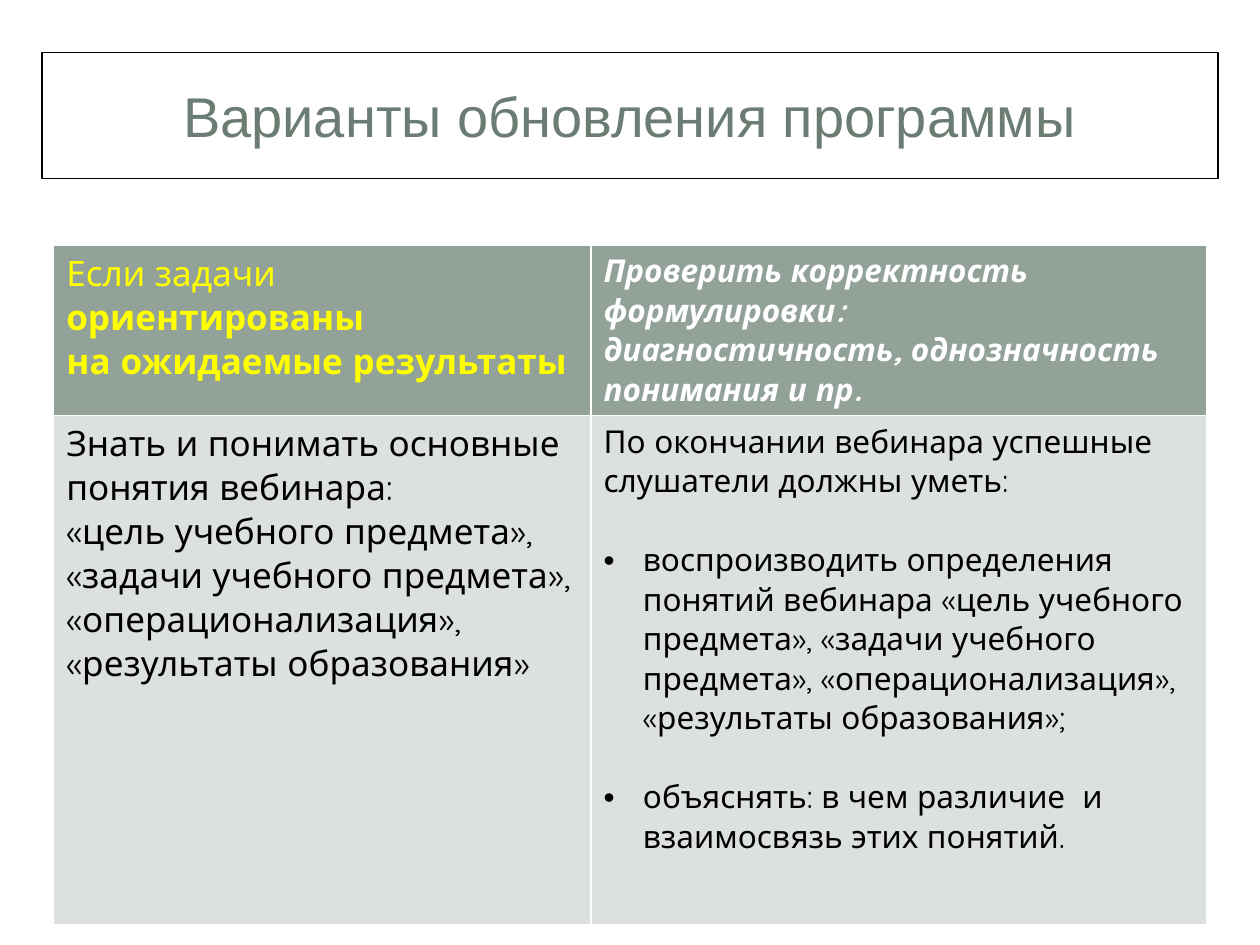
from dataclasses import dataclass

from lxml.etree import SubElement
from pptx import Presentation
from pptx.dml.color import RGBColor
from pptx.enum.shapes import MSO_SHAPE as Shape
from pptx.enum.text import MSO_ANCHOR as Anchor, PP_ALIGN as Align
from pptx.oxml.ns import qn
from pptx.util import Pt


@dataclass(frozen=True)
class Theme:
    title_font: str = "Arial"
    body_font: str = "Quicksand"
    title_size: float = 32
    large_size: float = 20
    small_size: float = 18
    white: str = "FFFFFF"
    black: str = "000000"
    yellow: str = "FFFF00"
    title: str = "6B7D72"
    header_fill: str = "93A299"
    body_fill: str = "DCE0DE"


THEME = Theme()
BULLET_INDENT = 22.5
BULLET_GAP = 22.6


def color(value):
    return RGBColor.from_string(value)


def style_font(font, name, size, value, bold=False, italic=False):
    font.name = name
    font.size = Pt(size)
    font.color.rgb = color(value)
    font.bold = bold
    font.italic = italic


def add_title(slide, text):
    shape = slide.shapes.add_shape(
        Shape.RECTANGLE, Pt(24), Pt(30), Pt(672), Pt(72))
    shape.shadow.inherit = False
    shape.fill.solid()
    shape.fill.fore_color.rgb = color(THEME.white)
    shape.line.color.rgb = color(THEME.black)
    shape.line.width = Pt(0.75)
    frame = shape.text_frame
    frame.word_wrap = False
    frame.vertical_anchor = Anchor.MIDDLE
    paragraph = frame.paragraphs[0]
    paragraph.text = text
    paragraph.alignment = Align.CENTER
    style_font(paragraph.font, THEME.title_font, THEME.title_size, THEME.title)


def add_borders(cell):
    properties = cell._tc.get_or_add_tcPr()
    for side in ("a:lnL", "a:lnR", "a:lnT", "a:lnB"):
        line = SubElement(properties, qn(side), w=str(Pt(1)))
        fill = SubElement(line, qn("a:solidFill"))
        SubElement(fill, qn("a:srgbClr"), val=THEME.white)


def add_bullet(paragraph):
    paragraph.space_before = Pt(BULLET_GAP)
    properties = paragraph._p.get_or_add_pPr()
    properties.set("marL", str(Pt(BULLET_INDENT)))
    properties.set("indent", str(-Pt(BULLET_INDENT)))
    SubElement(properties, qn("a:buFont"), typeface=THEME.title_font)
    SubElement(properties, qn("a:buChar"), char="•")


def fill_cell(cell, fill, lines, size, value, bold=False, italic=False):
    add_borders(cell)
    cell.fill.solid()
    cell.fill.fore_color.rgb = color(fill)
    frame = cell.text_frame
    for index, text in enumerate(lines):
        paragraph = frame.add_paragraph() if index else frame.paragraphs[0]
        run = paragraph.add_run()
        run.text = text
        style_font(run.font, THEME.body_font, size, value, bold, italic)
    return frame.paragraphs


def add_task_table(slide):
    table = slide.shapes.add_table(
        2, 2, Pt(30.7), Pt(140), Pt(659), Pt(388)).table
    for column, width in zip(table.columns, (307, 352)):
        column.width = Pt(width)
    for row, height in zip(table.rows, (97, 291)):
        row.height = Pt(height)

    paragraphs = fill_cell(
        table.cell(0, 0), THEME.header_fill,
        ["Если задачи ", "на ожидаемые результаты"],
        THEME.large_size, THEME.yellow, bold=True)
    paragraphs[0].runs[0].font.bold = False
    emphasis = paragraphs[0].add_run()
    emphasis.text = "ориентированы"
    style_font(emphasis.font, THEME.body_font, THEME.large_size,
               THEME.yellow, bold=True)

    fill_cell(
        table.cell(0, 1), THEME.header_fill,
        ["Проверить корректность формулировки:",
         "диагностичность, однозначность понимания и пр."],
        THEME.small_size, THEME.white, bold=True, italic=True)

    concepts = ("«цель учебного предмета», «задачи учебного предмета», "
                "«операционализация», «результаты образования»")
    fill_cell(
        table.cell(1, 0), THEME.body_fill,
        ["Знать и понимать основные понятия вебинара:", concepts],
        THEME.large_size, THEME.black)

    paragraphs = fill_cell(
        table.cell(1, 1), THEME.body_fill,
        ["По окончании вебинара успешные слушатели должны уметь:",
         f"воспроизводить определения понятий вебинара {concepts};",
         "объяснять: в чем различие  и взаимосвязь этих понятий."],
        THEME.small_size, THEME.black)
    for paragraph in paragraphs[1:]:
        add_bullet(paragraph)


def main():
    presentation = Presentation()
    presentation.slide_width = Pt(720)
    presentation.slide_height = Pt(540)
    slide = presentation.slides.add_slide(presentation.slide_layouts[6])
    add_task_table(slide)
    add_title(slide, "Варианты обновления программы")
    presentation.save("out.pptx")


if __name__ == "__main__":
    main()
